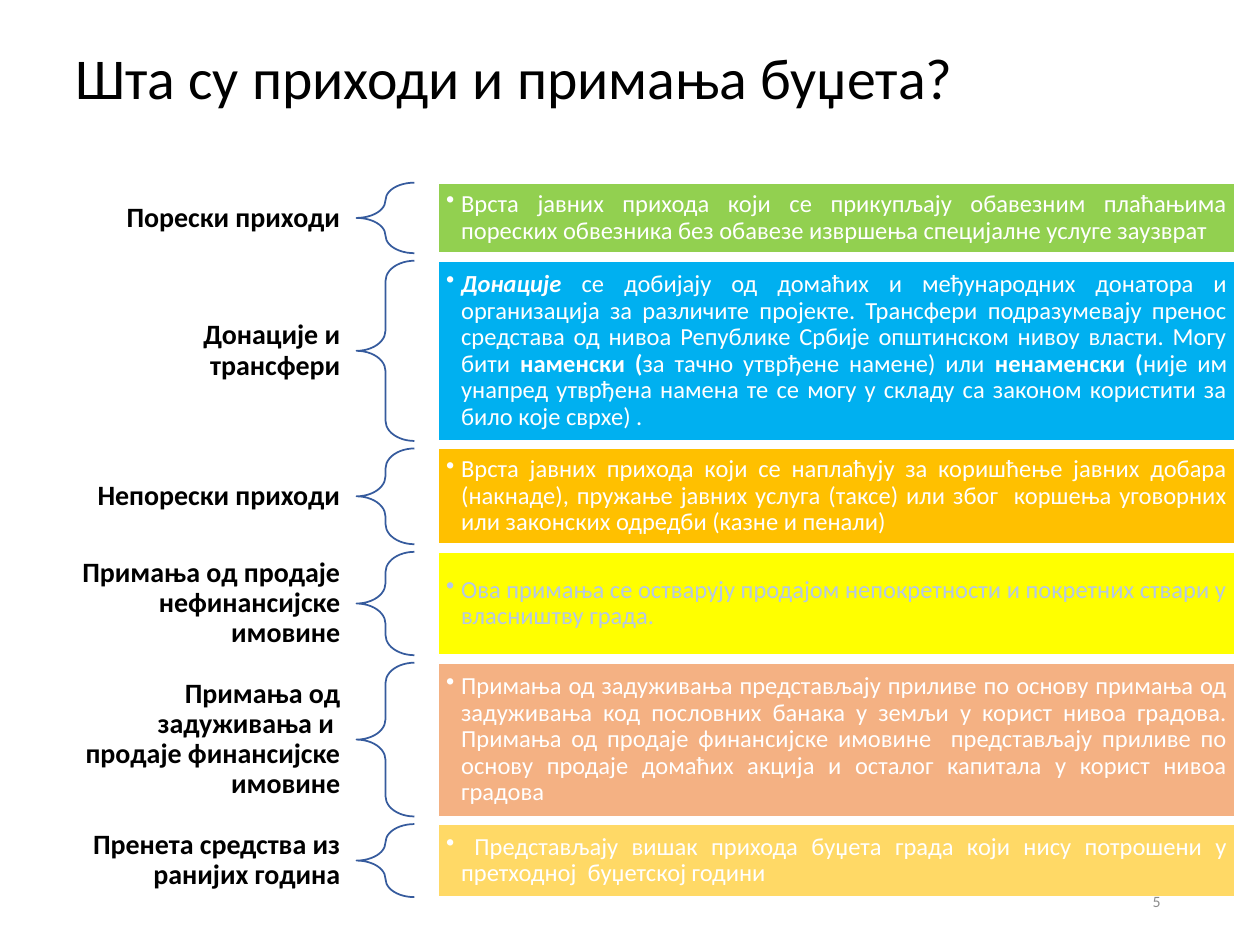
from lxml import etree
from pptx import Presentation
from pptx.dml.color import RGBColor
from pptx.enum.shapes import MSO_SHAPE
from pptx.enum.text import MSO_ANCHOR, PP_ALIGN
from pptx.oxml.ns import qn
from pptx.util import Inches, Pt

RECTANGLE, LEFT_BRACE = MSO_SHAPE.RECTANGLE, MSO_SHAPE.LEFT_BRACE
MIDDLE = MSO_ANCHOR.MIDDLE
LEFT, RIGHT, JUSTIFY = PP_ALIGN.LEFT, PP_ALIGN.RIGHT, PP_ALIGN.JUSTIFY

COLORS = {
    "black": "000000", "white": "FFFFFF", "gray": "8C8C8C", "brace": "365B9D",
    "pale_blue": "B4C7E7", "green": "92D050", "blue": "00B0F0",
    "orange": "FFC000", "yellow": "FFFF00", "salmon": "F4B183", "gold": "FFD966",
}
BOLD = {"bold": True}
BOLD_ITALIC = {"bold": True, "italic": True}

# Label, label height, row height, fill, text colour, description runs
ROWS = [
    ("Порески приходи", 0.35, 0.56, "green", "white", [
        ("Врста јавних прихода који се прикупљају обавезним плаћањима "
         "пореских обвезника без обавезе извршења специјалне услуге заузврат", {})]),
    ("Донације и трансфери", 0.58, 1.43, "blue", "white", [
        ("Донације ", BOLD_ITALIC),
        ("се добијају од домаћих и међународних донатора и организација за "
         "различите пројекте. Трансфери подразумевају пренос средстава од нивоа "
         "Републике Србије општинском нивоу власти. Могу бити ", {}),
        ("наменски (", BOLD),
        ("за тачно утврђене намене) или ", {}),
        ("ненаменски (", BOLD),
        ("није им унапред утврђена намена те се могу у складу са законом "
         "користити за било које сврхе) .", {})]),
    ("Непорески приходи", 0.35, 0.76, "orange", "white", [
        ("Врста јавних прихода који се наплаћују за коришћење јавних добара "
         "(накнаде), пружање јавних услуга (таксе) или због  коршења уговорних "
         "или законских одредби (казне и пенали)", {})]),
    ("Примања од продаје нефинансијске имовине", 0.82, 0.82, "yellow", "pale_blue", [
        ("Ова примања се остварују продајом непокретности и покретних ствари "
         "у власништву града.", {})]),
    ("Примања од задуживања и  продаје финансијске имовине", 1.08, 1.22,
     "salmon", "white", [
        ("Примања од задуживања представљају приливе по основу примања од "
         "задуживања код пословних банака у земљи у корист нивоа градова. "
         "Примања од продаје финансијске имовине  представљају приливе по основу "
         "продаје домаћих акција и осталог капитала у корист нивоа градова", {})]),
    ("Пренета средства из ранијих година", 0.58, 0.58, "gold", "white", [
        (" Представљају вишак прихода буџета града који нису потрошени у "
         "претходној  буџетској години", {})]),
]
FIRST_TOP, ROW_GAP = 1.45, 0.06


def write(shape, runs, size, color, alignment, margins=(0.1, 0.05), line_spacing=0.9):
    """Fill a shape with one paragraph of (text, format) runs."""
    frame = shape.text_frame
    horizontal, vertical = (Inches(margin) for margin in margins)
    frame_format = {
        "word_wrap": True, "vertical_anchor": MIDDLE,
        "margin_left": horizontal, "margin_right": horizontal,
        "margin_top": vertical, "margin_bottom": vertical,
    }
    for name, value in frame_format.items():
        setattr(frame, name, value)
    paragraph = frame.paragraphs[0]
    paragraph.alignment = alignment
    paragraph.line_spacing = line_spacing
    for text, run_format in runs:
        run = paragraph.add_run()
        run.text = text
        run.font.color.rgb = RGBColor.from_string(COLORS[color])
        for name, value in {"name": "Calibri", "size": Pt(size), **run_format}.items():
            setattr(run.font, name, value)
    return paragraph


def add_bullet(paragraph):
    """Give a paragraph a round bullet with a hanging indent."""
    properties = paragraph._p.get_or_add_pPr()
    properties.set("marL", str(Inches(0.12)))
    properties.set("indent", str(-Inches(0.12)))
    etree.SubElement(properties, qn("a:buChar")).set("char", "•")


presentation = Presentation()
presentation.slide_width, presentation.slide_height = Inches(10), Inches(7.5)
slide = presentation.slides.add_slide(presentation.slide_layouts[6])
shapes = slide.shapes

# Title
title = shapes.add_textbox(Inches(0.5), Inches(0.3), Inches(9), Inches(0.68))
write(title, [("Шта су приходи и примања буџета?", {})], 33, "black", LEFT)

# Revenue types: label, brace and description
top = FIRST_TOP
for label_text, label_height, height, fill, text_color, runs in ROWS:
    label_top = top + (height - label_height) / 2
    label = shapes.add_textbox(
        Inches(0.5), Inches(label_top), Inches(2.32), Inches(label_height))
    write(label, [(label_text, BOLD)], 16, "black", RIGHT, (0.12, 0.04))

    brace = shapes.add_shape(
        LEFT_BRACE, Inches(2.83), Inches(top), Inches(0.46), Inches(height))
    brace.adjustments[0] = 0.35
    brace.fill.background()

    description = shapes.add_shape(
        RECTANGLE, Inches(3.48), Inches(top), Inches(6.32), Inches(height))
    description.fill.solid()
    description.fill.fore_color.rgb = RGBColor.from_string(COLORS[fill])
    add_bullet(write(description, runs, 14, text_color, JUSTIFY, (0.06, 0.06)))

    for shape, line_color in ((brace, "brace"), (description, "white")):
        shape.shadow.inherit = False
        shape.line.width = Pt(1)
        shape.line.color.rgb = RGBColor.from_string(COLORS[line_color])
    top += height + ROW_GAP

# Slide number
number = shapes.add_textbox(Inches(7.06), Inches(6.95), Inches(2.25), Inches(0.4))
write(number, [("5", {})], 9, "gray", RIGHT, line_spacing=1.0)

presentation.save("out.pptx")
